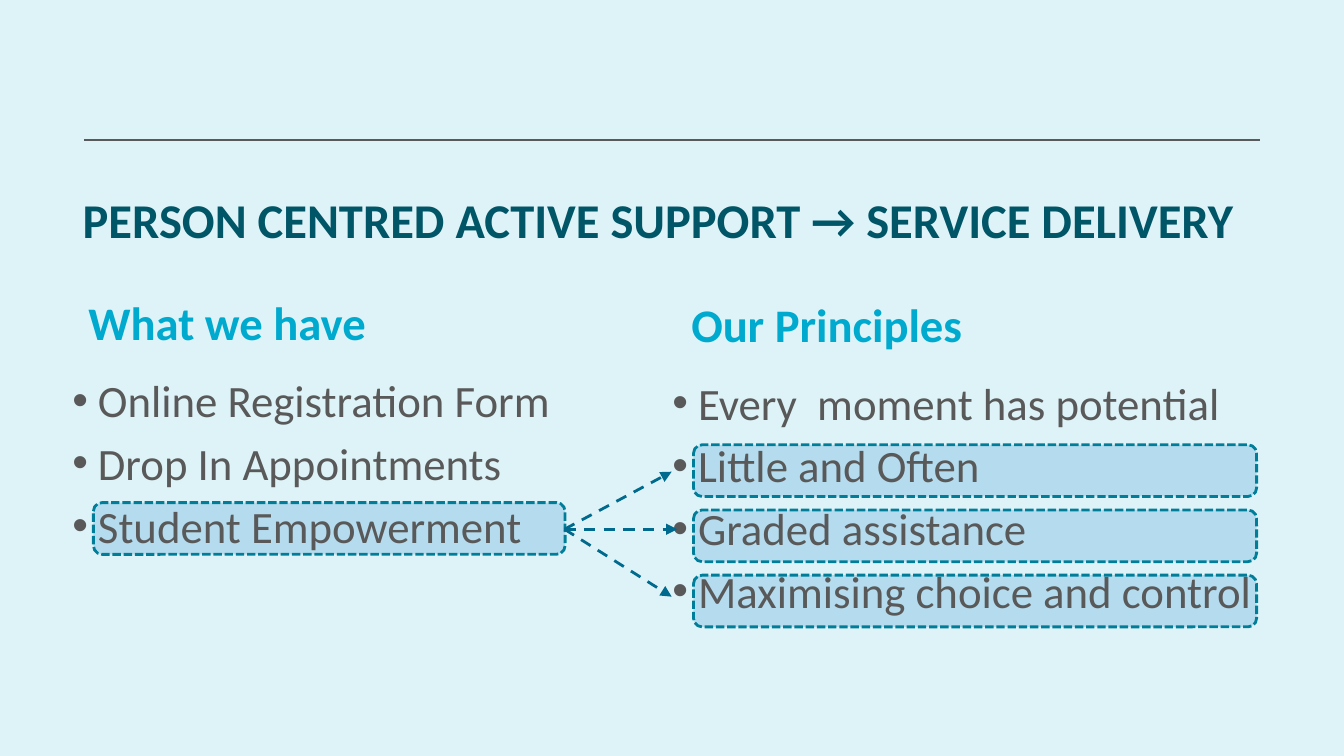
from lxml import etree
from pptx import Presentation, util as u
from pptx.dml.color import RGBColor
from pptx.enum import dml, shapes, text
from pptx.oxml.ns import qn

PALE = RGBColor(0xDE, 0xF3, 0xF7)
SKY = RGBColor(0xB4, 0xDC, 0xEE)
TEAL = RGBColor(0x00, 0x7D, 0x98)
BLUE = RGBColor(0x00, 0x6A, 0x8E)
CYAN = RGBColor(0x00, 0xA9, 0xCE)
DEEP = RGBColor(0x00, 0x55, 0x67)
GREY = RGBColor(0x59, 0x59, 0x59)
RULE = RGBColor(0x58, 0x59, 0x5B)
CELL = u.Inches(0.1)
WIDE, HIGH = 100, 56.25
INDENT = 1.9
MARK = 3.85


def grid(*cells):
    """Turn grid columns and rows into lengths."""
    return [round(cell * CELL) for cell in cells]


def write(shape, lines, size, color, bold=False, tight=None, dots=False):
    """Fill a text shape with evenly styled paragraphs."""
    frame = shape.text_frame
    frame.text = "\n".join(lines)
    frame.word_wrap = True
    frame.auto_size = text.MSO_AUTO_SIZE.NONE
    frame.vertical_anchor = text.MSO_ANCHOR.TOP
    frame.margin_top, = grid(0.5)
    for row, para in enumerate(frame.paragraphs):
        para.alignment = text.PP_ALIGN.LEFT
        para.line_spacing = tight
        para.space_before = u.Pt(size * 0.2 if row else 0)
        if dots:
            props = para._p.get_or_add_pPr()
            props.set("marL", str(grid(INDENT)[0]))
            props.set("indent", str(grid(-INDENT)[0]))
            etree.SubElement(props, qn("a:buFont")).set("typeface", "Arial")
            etree.SubElement(props, qn("a:buChar")).set("char", "•")
        for run in para.runs:
            font = run.font
            font.name, font.size, font.bold = "Calibri", u.Pt(size), bold
            font.color.rgb = color


def stroke(slide, start, end, color, width, arrow=False):
    """Draw a straight line, dashed with a head if it is an arrow."""
    line = slide.shapes.add_connector(
        shapes.MSO_CONNECTOR.STRAIGHT, *grid(*start, *end))
    line.line.color.rgb = color
    line.line.width = u.Pt(width)
    if arrow:
        line.line.dash_style = dml.MSO_LINE.DASH
        tail = etree.SubElement(line.line._get_or_add_ln(), qn("a:tailEnd"))
        tail.set("type", "triangle")
    etree.SubElement(line._element.spPr, qn("a:effectLst"))


def header(slide, left, top, width, height):
    """Place the rule and the title below it."""
    stroke(slide, (left + 88.6, top), (left + 1.1, top), RULE, 0.75)
    title = slide.shapes.title
    title.left, title.top, title.width, title.height = grid(
        left, top + 4.4, width, height - 4.4)
    write(title, ["PERSON CENTRED ACTIVE SUPPORT → SERVICE DELIVERY"],
          26, DEEP, True, 0.7)


def mark(slide, left, top, width):
    """Place a dashed highlight behind a list entry."""
    shape = slide.shapes.add_shape(
        shapes.MSO_SHAPE.ROUNDED_RECTANGLE, *grid(left, top, width, MARK))
    shape.shadow.inherit = False
    shape.fill.solid()
    shape.fill.fore_color.rgb = SKY
    shape.line.color.rgb = TEAL
    shape.line.width = u.Pt(1.5)
    shape.line.dash_style = dml.MSO_LINE.SQUARE_DOT


def column(slide, box, head, inset, items, marks, span):
    """Place a heading over a bullet list with highlighted entries."""
    left, top, width, height = box
    for drop in marks:
        mark(slide, left + 2.55, top + drop, span)
    body = slide.shapes.add_textbox(
        *grid(left, top + 4.75, width, height - 4.75))
    write(body, items, 24, GREY, dots=True)
    label = slide.shapes.add_textbox(*grid(left + inset, top, 41.2, 2.7))
    write(label, [head], 25, CYAN, True, 0.7)


def links(slide, left, top, width, height):
    """Fan three arrows out from the left edge of the box."""
    start = left, top + height * 0.46
    for share, drop in ((0.95, 0), (1, 0.46), (0.95, 1)):
        end = left + width * share, top + height * drop
        stroke(slide, start, end, BLUE, 1.5, True)


def main():
    """Build and save the slide."""
    deck = Presentation()
    deck.slide_width, deck.slide_height = grid(WIDE, HIGH)
    slide = deck.slides.add_slide(deck.slide_layouts[5])
    slide.background.fill.solid()
    slide.background.fill.fore_color.rgb = PALE
    header(slide, 5.15, 10.42, 89.5, 7.8)
    column(slide, (4.4, 22.5, 47.9, 28.9), "What we have", 1.2,
           ["Online Registration Form", "Drop In Appointments",
            "Student Empowerment"], [14.9], 35.1)
    column(slide, (49.05, 22.7, 47.9, 29), "Our Principles", 1.4,
           ["Every  moment has potential", "Little and Often",
            "Graded assistance", "Maximising choice and control"],
           [10.4 + 4.85 * row for row in range(3)], 41.9)
    links(slide, 42, 35.1, 8.4, 9.3)
    deck.save("out.pptx")


if __name__ == "__main__":
    main()
